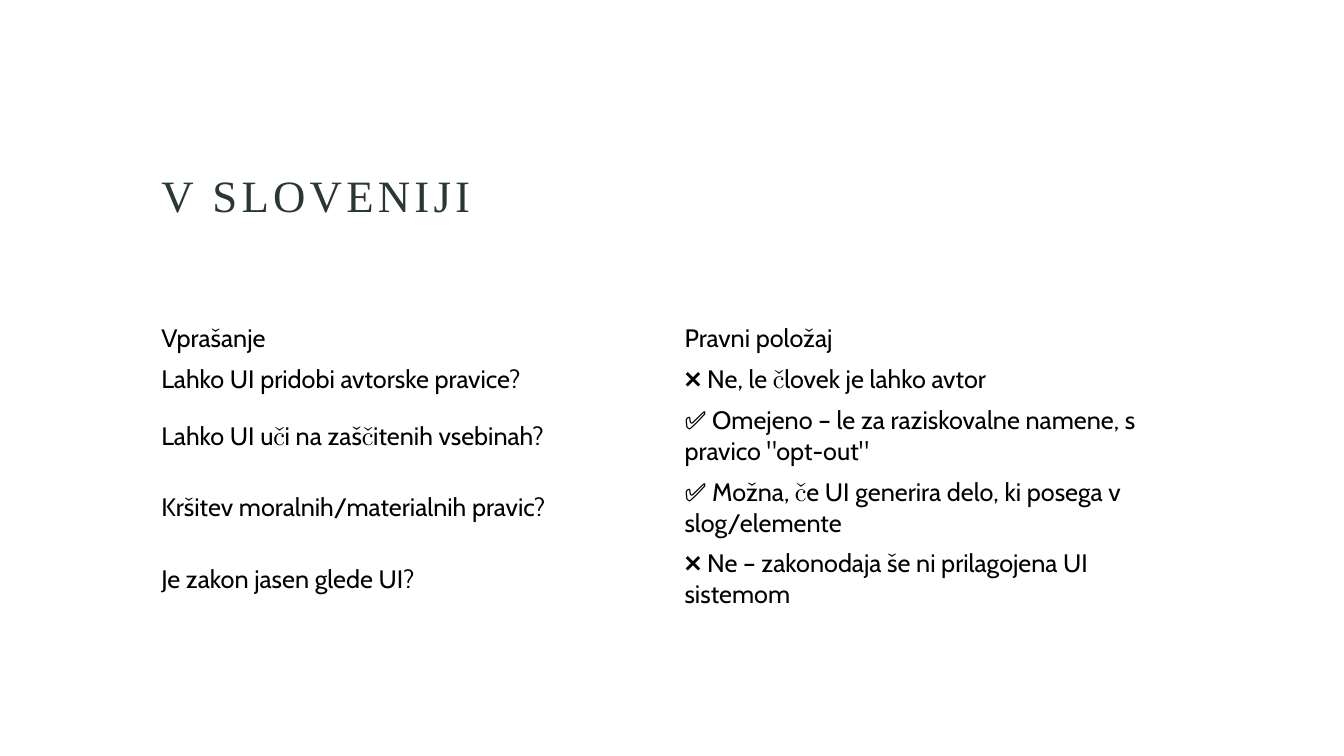
from pptx import Presentation
from pptx.dml.color import RGBColor
from pptx.enum.text import MSO_ANCHOR, PP_ALIGN
from pptx.util import Inches, Pt

MIDDLE = MSO_ANCHOR.MIDDLE
BOTTOM = MSO_ANCHOR.BOTTOM
LEFT = PP_ALIGN.LEFT
DARK_GREEN = RGBColor(0x29, 0x37, 0x37)
BLACK = RGBColor(0x00, 0x00, 0x00)

TITLE_FONT = {"name": "Times New Roman", "size": Pt(32), "bold": False}
CELL_FONT = {"name": "Cabin", "size": Pt(18), "bold": False}
ROW_HEIGHTS = [0.4, 0.4, 0.7, 0.7, 0.7]
ANSWERS = [
    ("Vprašanje", "Pravni položaj"),
    ("Lahko UI pridobi avtorske pravice?", "❌ Ne, le človek je lahko avtor"),
    ("Lahko UI uči na zaščitenih vsebinah?",
     '✅ Omejeno – le za raziskovalne namene, s pravico "opt-out"'),
    ("Kršitev moralnih/materialnih pravic?",
     "✅ Možna, če UI generira delo, ki posega v slog/elemente"),
    ("Je zakon jasen glede UI?",
     "❌ Ne – zakonodaja še ni prilagojena UI sistemom"),
]


def write(frame, text, font_values, color):
    paragraph = frame.paragraphs[0]
    paragraph.alignment = LEFT
    run = paragraph.add_run()
    run.text = text
    for key, value in font_values.items():
        setattr(run.font, key, value)
    run.font.color.rgb = color
    return run


prs = Presentation()
prs.slide_width, prs.slide_height = Inches(13.33), Inches(7.5)
slide = prs.slides.add_slide(prs.slide_layouts[5])

title = slide.shapes.title
title.left, title.top = Inches(1.5), Inches(0.75)
title.width, title.height = Inches(10.38), Inches(1.5)
title.text_frame.vertical_anchor = BOTTOM
heading = write(title.text_frame, "V SLOVENIJI", TITLE_FONT, DARK_GREEN)
heading.font._element.set("spc", "300")
title.text_frame.paragraphs[0].line_spacing = 0.9

legal_table = slide.shapes.add_table(
    len(ANSWERS), 2, Inches(1.5), Inches(3.16), Inches(10.38), Inches(2.9)
).table
legal_table.first_row = False
legal_table.horz_banding = False

for row, height, answer in zip(legal_table.rows, ROW_HEIGHTS, ANSWERS):
    row.height = Inches(height)
    for cell, text in zip(row.cells, answer):
        cell.fill.background()
        cell.vertical_anchor = MIDDLE
        write(cell.text_frame, text, CELL_FONT, BLACK)

prs.save("out.pptx")
